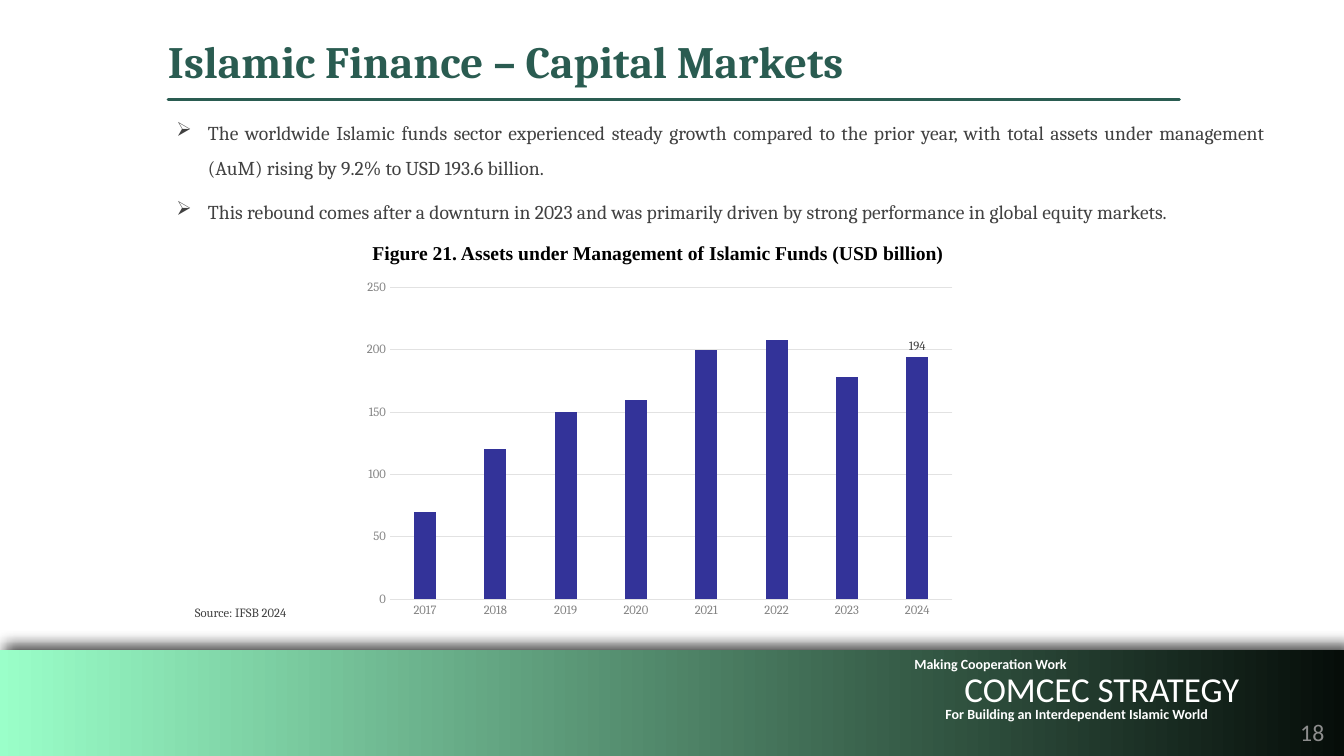
from lxml import etree
from pptx import Presentation
from pptx.chart.data import CategoryChartData
from pptx.dml.color import RGBColor
from pptx.enum.chart import XL_CHART_TYPE as ChartType, XL_LABEL_POSITION as LabelPosition
from pptx.enum.chart import XL_TICK_MARK as TickMark
from pptx.enum.shapes import MSO_CONNECTOR as Connector, MSO_SHAPE as Shape
from pptx.enum.text import MSO_ANCHOR as Anchor, PP_ALIGN as Align
from pptx.oxml import parse_xml
from pptx.oxml.ns import nsdecls, qn
from pptx.util import Pt

COLORS = {
    "green": "2A5C51", "mint": "9AFFC9", "dark": "060D09", "white": "FFFFFF",
    "black": "000000", "body": "414141", "axis": "848484", "grid": "E2E2E2",
    "number": "8D8D8D", "bars": "333399",
}


def rgb(name):
    return RGBColor.from_string(COLORS[name])


def add_text(left, top, width, height, *paragraphs, size, color, font="Cambria",
             bold=False, align=Align.LEFT, anchor=Anchor.TOP, margins=(0, 0),
             wrap=True, bullet=None):
    frame = slide.shapes.add_textbox(Pt(left), Pt(top), Pt(width), Pt(height)).text_frame
    frame.word_wrap = wrap
    frame.vertical_anchor = anchor
    frame.margin_left = frame.margin_right = Pt(margins[0])
    frame.margin_top = frame.margin_bottom = Pt(margins[1])
    for index, text in enumerate(paragraphs):
        paragraph = frame.paragraphs[0] if index == 0 else frame.add_paragraph()
        paragraph.alignment = align
        if bullet:
            paragraph.line_spacing = 1.5
            paragraph.space_after = Pt(6)
            properties = paragraph._p.get_or_add_pPr()
            properties.set("marL", str(Pt(22.5)))
            properties.set("indent", str(Pt(-22.5)))
            etree.SubElement(properties, qn("a:buChar")).set("char", bullet)
        run = paragraph.add_run()
        run.text = text
        run.font.name = font
        run.font.size = Pt(size)
        run.font.bold = bold
        run.font.color.rgb = rgb(color)


prs = Presentation()
prs.slide_width, prs.slide_height = Pt(960), Pt(540)
slide = prs.slides.add_slide(prs.slide_layouts[6])

# Footer band with gradient and shadow
band = slide.shapes.add_shape(Shape.RECTANGLE, Pt(-2), Pt(464.4), Pt(963), Pt(75.6))
band.line.fill.background()
band.fill.gradient()
band.fill.gradient_angle = 0
for stop, color in zip(band.fill.gradient_stops, ("mint", "dark")):
    stop.color.rgb = rgb(color)
band._element.spPr.append(parse_xml(
    f'<a:effectLst {nsdecls("a")}>'
    f'<a:outerShdw blurRad="{Pt(10)}" dist="{Pt(6)}" dir="{318 * 60000}" rotWithShape="0">'
    f'<a:srgbClr val="{COLORS["black"]}"><a:alpha val="75000"/></a:srgbClr>'
    '</a:outerShdw></a:effectLst>'))

# Footer wording and slide number
add_text(804, 509.8, 147, 30, "18", size=17, color="number", font="Calibri",
         align=Align.RIGHT, margins=(5, 3))
add_text(619, 504, 300, 20, "For Building an Interdependent Islamic World", size=10,
         color="white", font="Calibri", bold=True, align=Align.CENTER)
add_text(637, 472.3, 300, 34.6, "COMCEC STRATEGY", size=25, color="white",
         font="Calibri", align=Align.CENTER, anchor=Anchor.BOTTOM)
add_text(557.5, 468, 300, 26, "Making Cooperation Work", size=10, color="white",
         font="Calibri", bold=True, align=Align.CENTER)

# Title and rule
add_text(120, 23.8, 683, 39, "Islamic Finance – Capital Markets", size=32,
         color="green", bold=True)
rule = slide.shapes.add_connector(Connector.STRAIGHT, Pt(120), Pt(71.2), Pt(842.5), Pt(71.2))
rule.line.color.rgb = rgb("green")
rule.line.width = Pt(2)
rule.line._get_or_add_ln().set("cap", "rnd")
etree.SubElement(rule._element.spPr, qn("a:effectLst"))

# Key points
add_text(
    119, 74.2, 792, 86.4,
    "The worldwide Islamic funds sector experienced steady growth compared to the prior year, "
    "with total assets under management (AuM) rising by 9.2% to USD 193.6 billion.",
    "This rebound comes after a downturn in 2023 and was primarily driven by strong "
    "performance in global equity markets.",
    size=14, color="body", align=Align.JUSTIFY, margins=(7.2, 3.6), bullet="➢")

# Figure caption and source
add_text(259, 168.5, 493, 24.5,
         "Figure 21. Assets under Management of Islamic Funds (USD billion)",
         size=14, color="black", font="Times New Roman", bold=True, margins=(7.2, 3.6))
add_text(129, 428.4, 85.7, 18, "Source: IFSB 2024", size=9, color="body",
         align=Align.CENTER, margins=(7.2, 3.6), wrap=False)

# Column chart of fund assets
fund_assets = CategoryChartData(number_format="0")
fund_assets.categories = [str(year) for year in range(2017, 2025)]
fund_assets.add_series("Series 1", (70, 120, 150, 160, 200, 208, 178, 194))
chart = slide.shapes.add_chart(ChartType.COLUMN_CLUSTERED, Pt(253.4), Pt(195), Pt(435.6),
                               Pt(251.3), fund_assets).chart
chart.has_title = False
chart.has_legend = False
chart.font.name = "Cambria"
chart.font.size = Pt(10)
chart.font.color.rgb = rgb("body")

columns = chart.plots[0]
columns.gap_width = 219
columns.overlap = -27
columns.vary_by_categories = False
assets = columns.series[0]
assets.format.fill.solid()
assets.format.fill.fore_color.rgb = rgb("bars")
latest_label = assets.points[7].data_label
latest_label.position = LabelPosition.OUTSIDE_END

years, billions = chart.category_axis, chart.value_axis
for axis in (years, billions):
    axis.major_tick_mark = axis.minor_tick_mark = TickMark.NONE
for font, color in ((years.tick_labels.font, "axis"), (billions.tick_labels.font, "axis"),
                    (latest_label.font, "body")):
    font.name = "Cambria"
    font.size = Pt(9)
    font.color.rgb = rgb(color)
billions.minimum_scale, billions.maximum_scale, billions.major_unit = 0, 250, 50
billions.tick_labels.number_format = "0"
billions.tick_labels.number_format_is_linked = False
billions.format.line.fill.background()
for line in (years.format.line, billions.major_gridlines.format.line):
    line.color.rgb = rgb("grid")
    line.width = Pt(0.75)

prs.save("out.pptx")
